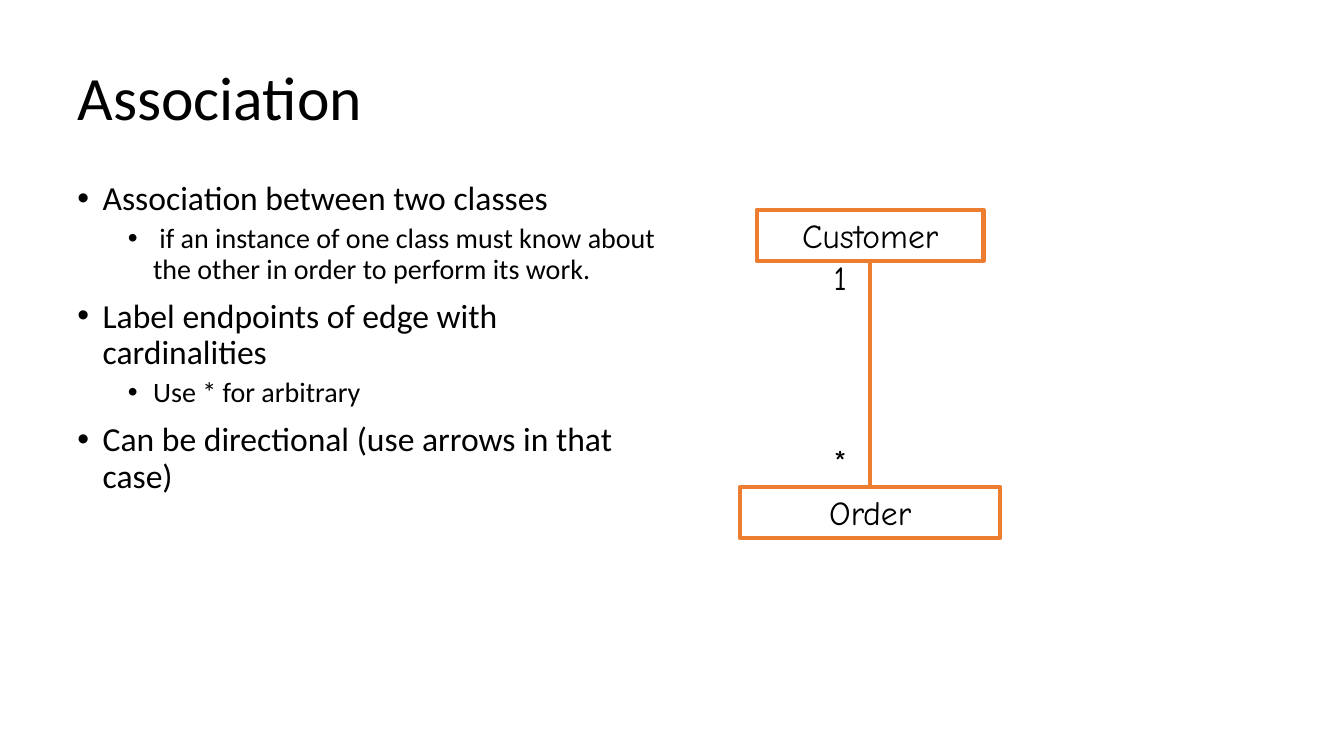
from dataclasses import dataclass

from lxml.etree import SubElement
from pptx import Presentation
from pptx.dml.color import RGBColor
from pptx.enum.shapes import MSO_CONNECTOR, MSO_SHAPE
from pptx.enum.text import MSO_ANCHOR, PP_ALIGN
from pptx.oxml.ns import qn
from pptx.util import Inches, Pt


@dataclass(frozen=True)
class Theme:
    ink: RGBColor = RGBColor(0, 0, 0)
    edge: RGBColor = RGBColor(0xED, 0x7D, 0x31)
    width: int = Pt(3)
    font: str = "Calibri"
    hand: str = "Comic Neue"
    title: int = 44
    main: int = 24
    sub: int = 20


THEME = Theme()
# Level, text
POINTS = [
    (0, "Association between two classes"),
    (1, " if an instance of one class must know about the other in order to perform its work."),
    (0, "Label endpoints of edge with cardinalities"),
    (1, "Use * for arbitrary"),
    (0, "Can be directional (use arrows in that case)"),
]
MID = 8.63  # centre line of the class diagram
TALL = 0.51  # height of a class box


def write(frame, text, size=THEME.main, font=THEME.font, align=PP_ALIGN.LEFT,
          line=None, before=0):
    """Fill the first paragraph, or add one below the text already there."""
    para = frame.add_paragraph() if frame.text else frame.paragraphs[0]
    para.alignment, para.line_spacing, para.space_before = align, line, Pt(before)
    run = para.add_run()
    run.text = text
    run.font.size, run.font.name = Pt(size), font
    run.font.color.rgb = THEME.ink
    return para


def bullet(para, level):
    para.level = level
    props = para._p.get_or_add_pPr()
    props.set("marL", str(Inches(0.25 + 0.5 * level)))
    props.set("indent", str(Inches(-0.25)))
    SubElement(props, qn("a:buFont"), typeface="Arial")
    SubElement(props, qn("a:buChar"), char="•")


def area(slide, left, top, width, height, anchor=MSO_ANCHOR.TOP):
    box = slide.shapes.add_textbox(Inches(left), Inches(top), Inches(width), Inches(height))
    frame = box.text_frame
    frame.word_wrap = True
    frame.vertical_anchor = anchor
    return frame


def entity(slide, name, top, width):
    box = slide.shapes.add_shape(MSO_SHAPE.RECTANGLE, Inches(MID - width / 2), Inches(top),
                                 Inches(width), Inches(TALL))
    box.shadow.inherit = False
    box.fill.background()
    box.line.color.rgb, box.line.width = THEME.edge, THEME.width
    box.text_frame.vertical_anchor = MSO_ANCHOR.TOP
    write(box.text_frame, name, font=THEME.hand, align=PP_ALIGN.CENTER)


def link(slide, start, end):
    edge = slide.shapes.add_connector(MSO_CONNECTOR.STRAIGHT, Inches(MID), Inches(start),
                                      Inches(MID), Inches(end))
    edge.line.color.rgb, edge.line.width = THEME.edge, THEME.width
    SubElement(edge._element.spPr, qn("a:effectLst"))


def main():
    deck = Presentation()
    deck.slide_width, deck.slide_height = Inches(13.33), Inches(7.5)
    slide = deck.slides.add_slide(deck.slide_layouts[6])

    # Title
    head = area(slide, 0.67, 0.5, 11.78, 1, MSO_ANCHOR.MIDDLE)
    write(head, "Association", size=THEME.title, line=0.9)

    # Bullet list
    body = area(slide, 0.67, 1.75, 5.94, 4.83)
    for level, text in POINTS:
        size, before = (THEME.sub, 5) if level else (THEME.main, 10)
        bullet(write(body, text, size=size, line=0.9, before=before), level)

    # Class diagram
    high, low = 2.08, 4.83
    entity(slide, "Order", low, 2.58)
    link(slide, high + TALL, low)
    entity(slide, "Customer", high, 2.25)

    # Cardinalities
    for mark, top in (("*", 4.33), ("1", 2.5)):
        write(area(slide, 8.17, top, 0.42, 0.5), mark, font=THEME.hand)

    deck.save("out.pptx")


if __name__ == "__main__":
    main()
